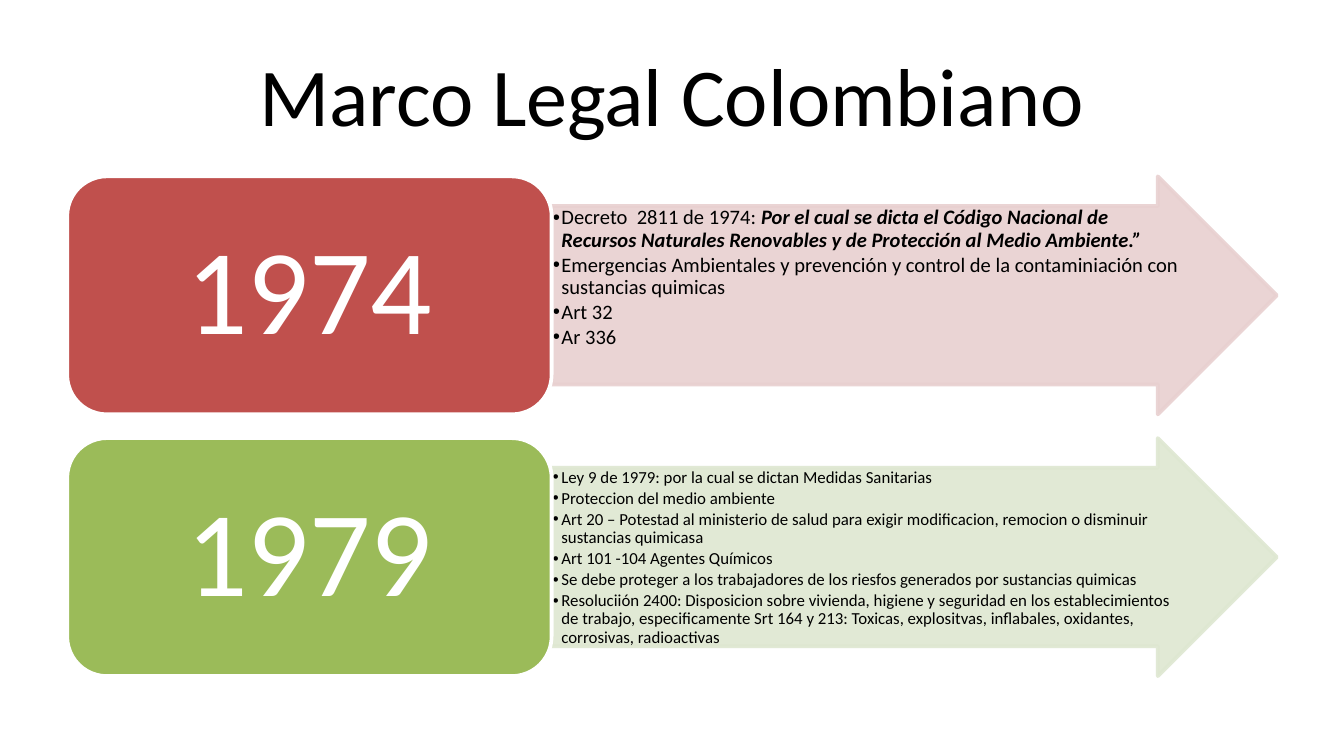
from lxml.etree import SubElement
from pptx import Presentation
from pptx.dml.color import RGBColor
from pptx.enum.shapes import MSO_SHAPE
from pptx.enum.text import MSO_ANCHOR, MSO_AUTO_SIZE, PP_ALIGN
from pptx.oxml.ns import qn
from pptx.util import Pt

EMU_PER_PX = 9525
FONT = "Calibri"
COLORS = {
    "text": "000000",
    "white": "FFFFFF",
    "red": "C0504D",
    "light_red": "E8D0D0",
    "green": "9BBB59",
    "light_green": "DEE7D1",
}
LAWS = [
    ("1974", "red", 11, [
        [("Decreto  2811 de 1974: ", False),
         ("Por el cual se dicta el Código Nacional de Recursos Naturales "
          "Renovables y de Protección al Medio Ambiente.”", True)],
        [("Emergencias Ambientales y prevención y control de la "
          "contaminiación con sustancias quimicas", False)],
        [("Art 32", False)],
        [("Ar 336", False)],
    ]),
    ("1979", "green", 9, [
        [("Ley 9 de 1979: por la cual se dictan Medidas Sanitarias", False)],
        [("Proteccion del medio ambiente", False)],
        [("Art 20 – Potestad al ministerio de salud para exigir modificacion, "
          "remocion o disminuir sustancias quimicasa", False)],
        [("Art 101 -104 Agentes Químicos", False)],
        [("Se debe proteger a los trabajadores de los riesfos generados por "
          "sustancias quimicas", False)],
        [("Resoluciión 2400: Disposicion sobre vivienda, higiene y seguridad "
          "en los establecimientos de trabajo, especificamente Srt 164 y 213: "
          "Toxicas, explositvas, inflabales, oxidantes, corrosivas, "
          "radioactivas", False)],
    ]),
]


def px(value):
    return value * EMU_PER_PX


def color(name):
    return RGBColor.from_string(COLORS[name])


class SlideBuilder:
    def __init__(self, slide):
        self.slide = slide

    def place(self, shape, left, top, width, height):
        shape.left, shape.top = px(left), px(top)
        shape.width, shape.height = px(width), px(height)

    def style_font(self, paragraph, size, color_name):
        paragraph.font.name = FONT
        paragraph.font.size = Pt(size)
        paragraph.font.color.rgb = color(color_name)

    def set_margins(self, frame, horizontal, vertical):
        frame.margin_left = frame.margin_right = px(horizontal)
        frame.margin_top = frame.margin_bottom = px(vertical)

    def title(self, text, *box):
        shape = self.slide.shapes.title
        self.place(shape, *box)
        frame = shape.text_frame
        frame.text = text
        frame.auto_size = MSO_AUTO_SIZE.NONE
        frame.vertical_anchor = MSO_ANCHOR.MIDDLE
        paragraph = frame.paragraphs[0]
        paragraph.alignment = PP_ALIGN.CENTER
        self.style_font(paragraph, 44, "text")

    def shape(self, preset, fill, line, *box):
        shape = self.slide.shapes.add_shape(preset, *map(px, box))
        shape.shadow.inherit = False
        shape.fill.solid()
        shape.fill.fore_color.rgb = color(fill)
        shape.line.color.rgb = color(line)
        shape.line.width = Pt(2)
        return shape

    def arrow(self, fill, *box):
        shape = self.shape(MSO_SHAPE.RIGHT_ARROW, fill, fill, *box)
        shape.adjustments[0] = 0.75
        shape.adjustments[1] = 0.5
        for element in shape.element.spPr.iter(qn("a:srgbClr")):
            SubElement(element, qn("a:alpha"), val="90000")

    def year(self, text, fill, *box):
        shape = self.shape(MSO_SHAPE.ROUNDED_RECTANGLE, fill, "white", *box)
        frame = shape.text_frame
        self.set_margins(frame, 26, 13)
        frame.vertical_anchor = MSO_ANCHOR.MIDDLE
        frame.text = text
        paragraph = frame.paragraphs[0]
        paragraph.alignment = PP_ALIGN.CENTER
        paragraph.line_spacing = 0.9
        self.style_font(paragraph, 65, "white")

    def bullets(self, placeholder, items, size, *box):
        self.place(placeholder, *box)
        placeholder.element.getparent().append(placeholder.element)
        frame = placeholder.text_frame
        frame.auto_size = MSO_AUTO_SIZE.NONE
        frame.vertical_anchor = MSO_ANCHOR.TOP
        self.set_margins(frame, 1, 1)
        for index, runs in enumerate(items):
            paragraph = frame.add_paragraph() if index else frame.paragraphs[0]
            paragraph.level = 1
            paragraph.line_spacing = 0.9
            paragraph.space_before = Pt(0)
            paragraph.space_after = Pt(1.5)
            properties = paragraph._p.get_or_add_pPr()
            properties.set("marL", str(px(6)))
            properties.set("indent", str(px(-6)))
            SubElement(properties, qn("a:buFont"), typeface="Arial")
            SubElement(properties, qn("a:buChar"), char="•")
            self.style_font(paragraph, size, "text")
            for text, emphasis in runs:
                run = paragraph.add_run()
                run.text = text
                if emphasis:
                    run.font.bold = run.font.italic = True


def main():
    presentation = Presentation()
    presentation.slide_width, presentation.slide_height = px(960), px(540)
    slide = presentation.slides.add_slide(presentation.slide_layouts[3])
    builder = SlideBuilder(slide)
    builder.title("Marco Legal Colombiano", 48, 22, 864, 90)
    bodies = list(slide.placeholders)[1:]
    for index, (year, hue, size, items) in enumerate(LAWS):
        top = 126 + index * 187
        builder.arrow("light_" + hue, 394, top, 518, 170)
        builder.bullets(bodies[index], items, size, 394, top + 21, 455, 128)
        builder.year(year, hue, 48, top, 346, 170)
    presentation.save("out.pptx")


if __name__ == "__main__":
    main()
